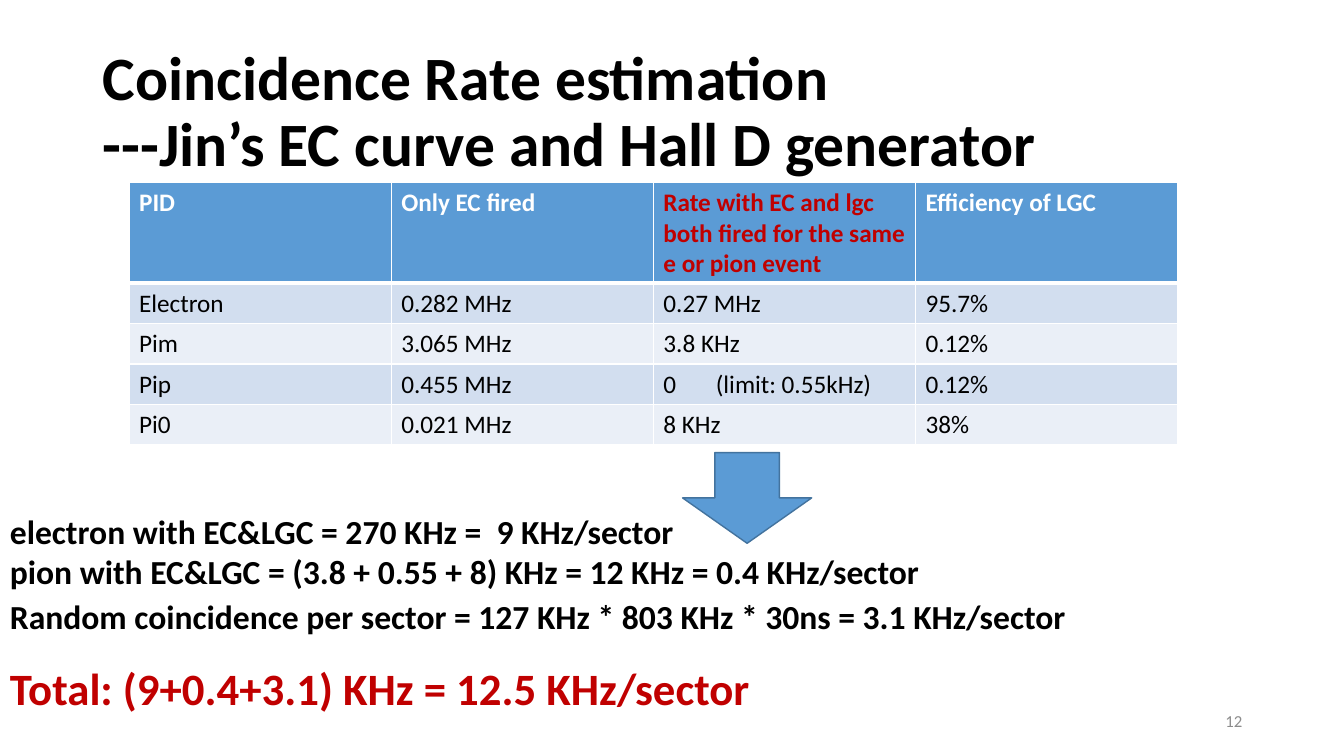
from lxml.etree import SubElement
from pptx import Presentation
from pptx.dml.color import RGBColor
from pptx.enum.shapes import MSO_SHAPE
from pptx.enum.text import MSO_ANCHOR, PP_ALIGN
from pptx.oxml.ns import qn
from pptx.util import Inches, Pt

BLACK = RGBColor(0x00, 0x00, 0x00)
WHITE = RGBColor(0xFF, 0xFF, 0xFF)
GRAY = RGBColor(0x8C, 0x8C, 0x8C)
RED = RGBColor(0xC0, 0x00, 0x00)
BLUE = RGBColor(0x5B, 0x9B, 0xD5)
NAVY = RGBColor(0x43, 0x73, 0x9E)
BANDS = [RGBColor(0xD2, 0xDE, 0xEF), RGBColor(0xEA, 0xEF, 0xF7)]


def write(frame, *lines, size=24, color=BLACK, bold=True, align=None, space=None):
    """Fill a text frame, one paragraph per line of text."""
    for i, line in enumerate(lines):
        para = frame.paragraphs[0] if i == 0 else frame.add_paragraph()
        para.text = line
        para.alignment = align
        para.line_spacing = space
        for run in para.runs:
            run.font.name = "Calibri"
            run.font.size = Pt(size)
            run.font.bold = bold
            run.font.color.rgb = color


def edge(cell, side, width):
    """Draw one white border of a table cell."""
    line = SubElement(cell._tc.get_or_add_tcPr(), qn("a:ln" + side), w=str(Pt(width)))
    fill = SubElement(line, qn("a:solidFill"))
    SubElement(fill, qn("a:srgbClr"), val=str(WHITE))


prs = Presentation()
prs.slide_width = Inches(13.33)
prs.slide_height = Inches(7.5)
slide = prs.slides.add_slide(prs.slide_layouts[6])
shapes = slide.shapes

# Title and page number
title = shapes.add_textbox(Inches(0.92), Inches(0.4), Inches(11.5), Inches(1.45)).text_frame
title.word_wrap = True
title.vertical_anchor = MSO_ANCHOR.MIDDLE
write(title, "Coincidence Rate estimation\v---Jin’s EC curve and Hall D generator",
      size=44, space=0.9)

page = shapes.add_textbox(Inches(9.42), Inches(6.95), Inches(3), Inches(0.4)).text_frame
page.word_wrap = True
page.vertical_anchor = MSO_ANCHOR.MIDDLE
write(page, "12", size=12, color=GRAY, bold=False, align=PP_ALIGN.RIGHT)

# Rate table
rows = [
    ["PID", "Only EC fired",
     "Rate with EC and lgc both fired for the same e or pion event", "Efficiency of LGC"],
    ["Electron", "0.282 MHz", "0.27 MHz", "95.7%"],
    ["Pim", "3.065 MHz", "3.8 KHz", "0.12%"],
    ["Pip", "0.455 MHz", "0\t(limit: 0.55kHz)", "0.12%"],
    ["Pi0", "0.021 MHz", "8 KHz", "38%"],
]
table = shapes.add_table(len(rows), 4, Inches(1.28), Inches(1.81),
                         Inches(10.4), Inches(2.6)).table
for r, row in enumerate(rows):
    head = r == 0
    table.rows[r].height = Inches(1 if head else 0.4)
    for c, text in enumerate(row):
        cell = table.cell(r, c)
        color = BLACK if not head else RED if c == 2 else WHITE
        write(cell.text_frame, text, size=18, color=color, bold=head)
        for side in "LRTB":
            thick = (r, side) in [(0, "B"), (1, "T")]
            edge(cell, side, 3 if thick else 1)
        cell.fill.solid()
        cell.fill.fore_color.rgb = BLUE if head else BANDS[(r - 1) % 2]
        if "\t" in text:
            props = cell.text_frame.paragraphs[0]._p.get_or_add_pPr()
            tabs = SubElement(props, qn("a:tabLst"))
            SubElement(tabs, qn("a:tab"), pos=str(Inches(0.52)), algn="l")

# Results below the table
notes = [
    (5.02, 9.3, 1.31, 24, BLACK,
     ["electron with EC&LGC = 270 KHz =  9 KHz/sector",
      "pion with EC&LGC = (3.8 + 0.55 + 8) KHz = 12 KHz = 0.4 KHz/sector"]),
    (5.86, 10.92, 0.5, 24, BLACK,
     ["Random coincidence per sector = 127 KHz * 803 KHz * 30ns = 3.1 KHz/sector"]),
    (6.51, 7.62, 0.64, 32, RED, ["Total: (9+0.4+3.1) KHz = 12.5 KHz/sector"]),
]
for top, width, height, size, color, lines in notes:
    frame = shapes.add_textbox(0, Inches(top), Inches(width), Inches(height)).text_frame
    frame.word_wrap = False
    write(frame, *lines, size=size, color=color)

arrow = shapes.add_shape(MSO_SHAPE.DOWN_ARROW, Inches(6.77), Inches(4.49),
                         Inches(1.28), Inches(0.9))
arrow.shadow.inherit = False
arrow.fill.solid()
arrow.fill.fore_color.rgb = BLUE
arrow.line.color.rgb = NAVY
arrow.line.width = Pt(1)

prs.save("out.pptx")
